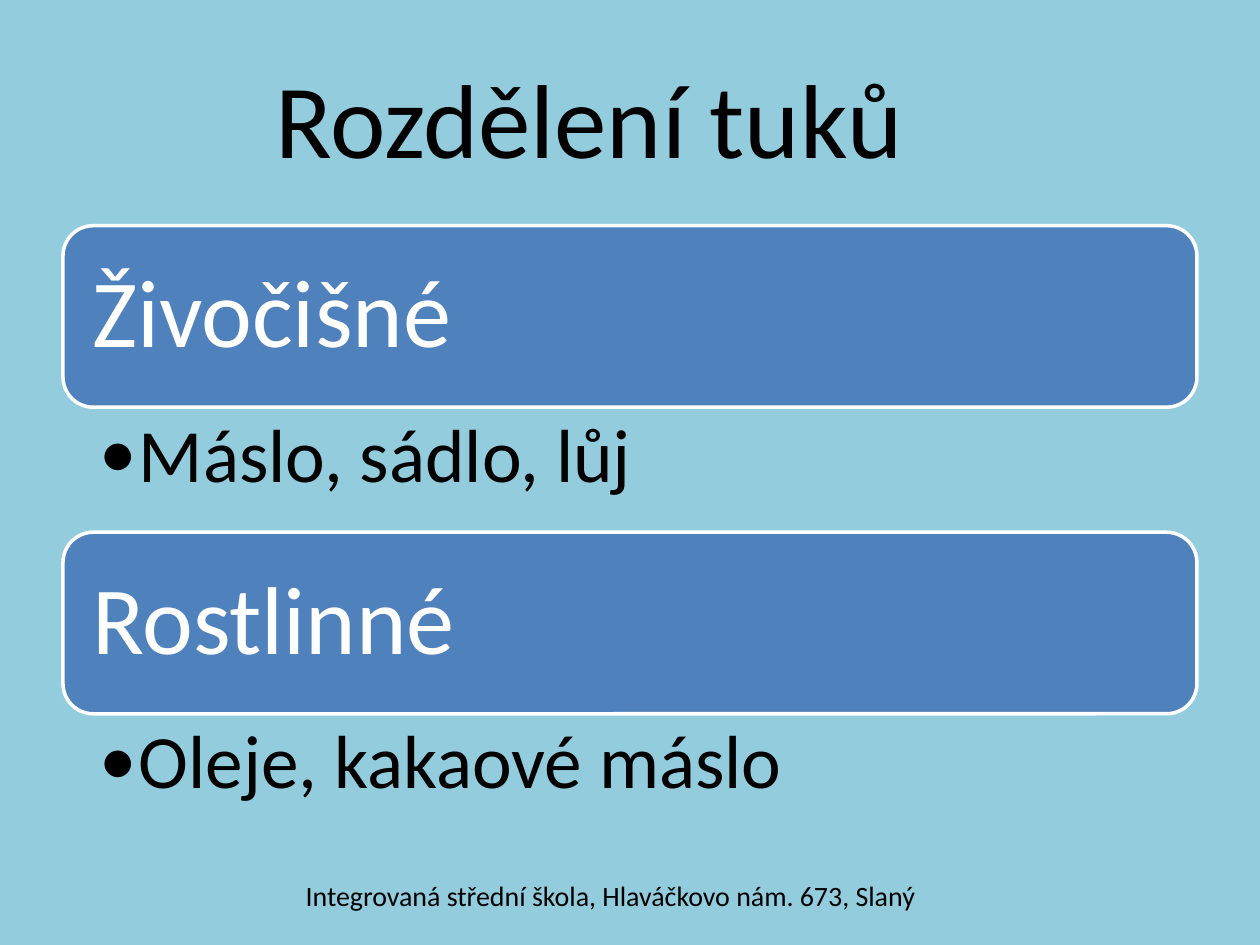
from dataclasses import dataclass

from lxml.etree import SubElement
from pptx import Presentation
from pptx.dml.color import RGBColor
from pptx.enum.shapes import MSO_SHAPE
from pptx.enum.text import MSO_ANCHOR, PP_ALIGN
from pptx.oxml.ns import qn
from pptx.slide import Slide
from pptx.text.text import TextFrame
from pptx.util import Cm, Pt

COLORS = {"background": "93CDDD", "band": "4F81BD", "light": "FFFFFF", "dark": "000000"}
FONT = "Calibri"
LEFT, WIDTH = 1.27, 22.86
FIRST_TOP, PITCH = 4.55, 6.18
BAND_HEIGHT, EXAMPLES_HEIGHT = 3.66, 2.52
BULLET_INDENT = 0.79


@dataclass
class FatGroup:
    name: str
    examples: str


@dataclass
class Caption:
    text: str
    left: float
    top: float
    width: float
    height: float
    size: int


FAT_GROUPS = [
    FatGroup("Živočišné", "Máslo, sádlo, lůj"),
    FatGroup("Rostlinné", "Oleje, kakaové máslo"),
]
CAPTIONS = [
    Caption("Rozdělení tuků", 1.27, 0.76, 21.23, 3.18, 60),
    Caption("Integrovaná střední škola, Hlaváčkovo nám. 673, Slaný",
            5.11, 17.53, 14.4, 1.02, 16),
]


def color(name: str) -> RGBColor:
    return RGBColor.from_string(COLORS[name])


def write(frame: TextFrame, text: str, size: int, ink: str,
          align: PP_ALIGN, anchor: MSO_ANCHOR) -> None:
    frame.word_wrap = True
    frame.vertical_anchor = anchor
    frame.text = text
    paragraph = frame.paragraphs[0]
    paragraph.alignment = align
    font = paragraph.runs[0].font
    font.name, font.size = FONT, Pt(size)
    font.color.rgb = color(ink)


def add_caption(slide: Slide, caption: Caption) -> None:
    box = slide.shapes.add_textbox(Cm(caption.left), Cm(caption.top),
                                   Cm(caption.width), Cm(caption.height))
    write(box.text_frame, caption.text, caption.size, "dark",
          PP_ALIGN.CENTER, MSO_ANCHOR.MIDDLE)


def add_band(slide: Slide, name: str, top: float) -> None:
    band = slide.shapes.add_shape(MSO_SHAPE.ROUNDED_RECTANGLE, Cm(LEFT), Cm(top),
                                  Cm(WIDTH), Cm(BAND_HEIGHT))
    band.shadow.inherit = False
    band.fill.solid()
    band.fill.fore_color.rgb = color("band")
    band.line.color.rgb = color("light")
    band.line.width = Pt(2)
    frame = band.text_frame
    frame.margin_left = frame.margin_right = Cm(0.41)
    write(frame, name, 55, "light", PP_ALIGN.LEFT, MSO_ANCHOR.MIDDLE)
    frame.paragraphs[0].line_spacing = 0.9


def add_examples(slide: Slide, examples: str, top: float) -> None:
    box = slide.shapes.add_textbox(Cm(LEFT), Cm(top), Cm(WIDTH), Cm(EXAMPLES_HEIGHT))
    frame = box.text_frame
    frame.margin_left, frame.margin_right = Cm(0.74), Cm(1.09)
    frame.margin_top = frame.margin_bottom = Cm(0.2)
    write(frame, examples, 43, "dark", PP_ALIGN.LEFT, MSO_ANCHOR.TOP)
    paragraph = frame.paragraphs[0]
    paragraph.line_spacing = 0.9
    properties = paragraph._p.get_or_add_pPr()
    properties.set("marL", str(Cm(BULLET_INDENT)))
    properties.set("indent", str(-Cm(BULLET_INDENT)))
    SubElement(properties, qn("a:buFont")).set("typeface", FONT)
    SubElement(properties, qn("a:buChar")).set("char", "•")


def main() -> None:
    presentation = Presentation()
    presentation.slide_width, presentation.slide_height = Cm(25.4), Cm(19.05)
    slide = presentation.slides.add_slide(presentation.slide_layouts[6])
    slide.background.fill.solid()
    slide.background.fill.fore_color.rgb = color("background")

    title, school = CAPTIONS
    add_caption(slide, title)
    for index, group in enumerate(FAT_GROUPS):
        top = FIRST_TOP + index * PITCH
        add_band(slide, group.name, top)
        add_examples(slide, group.examples, top + BAND_HEIGHT)
    add_caption(slide, school)

    presentation.save("out.pptx")


if __name__ == "__main__":
    main()
